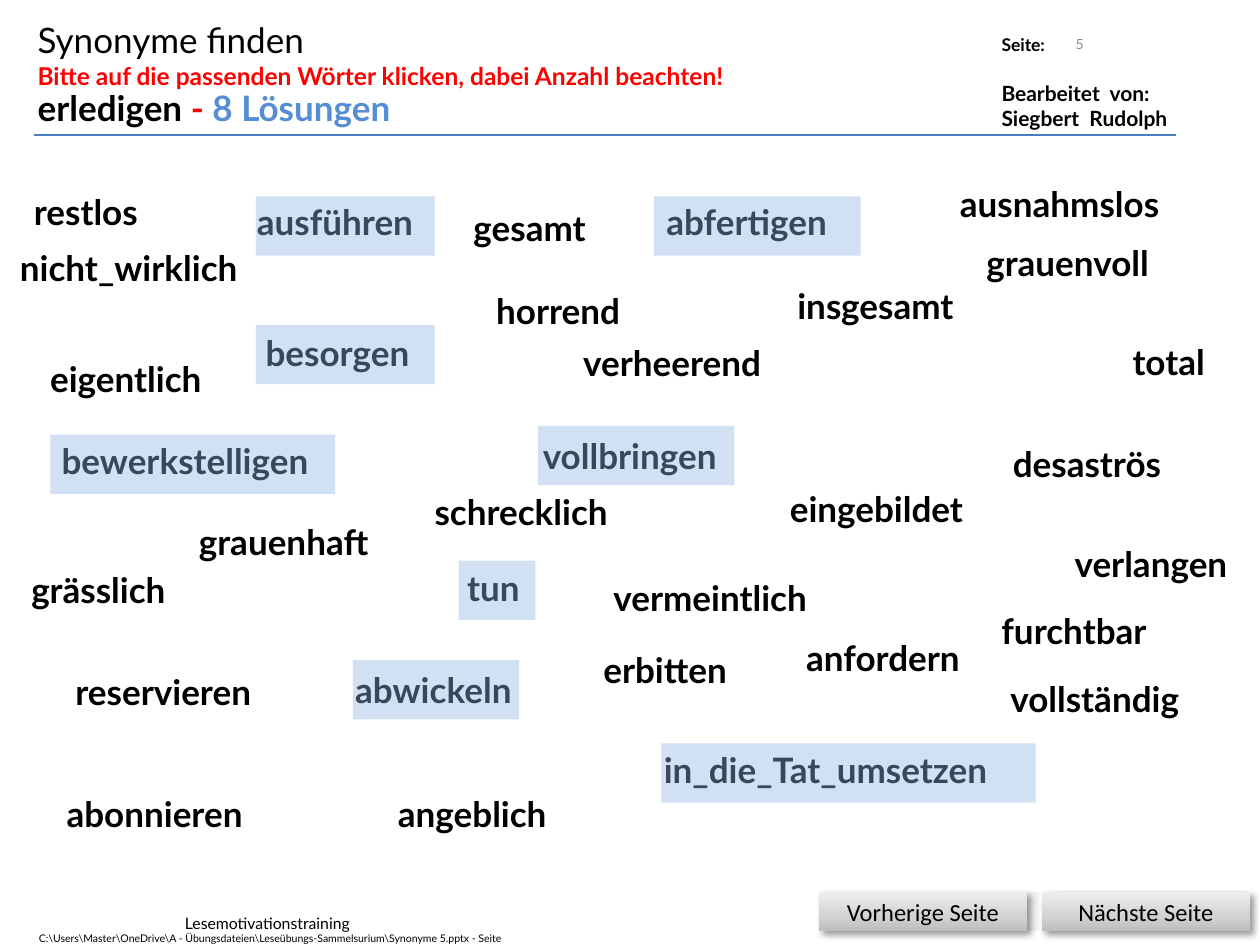
from dataclasses import dataclass

from lxml.etree import SubElement, fromstring
from pptx import Presentation
from pptx.dml.color import RGBColor
from pptx.enum.shapes import MSO_CONNECTOR as Connector, MSO_SHAPE as Preset
from pptx.enum.text import MSO_ANCHOR as Anchor, MSO_AUTO_SIZE as AutoSize, PP_ALIGN as Align
from pptx.oxml.ns import nsdecls, qn
from pptx.util import Inches, Pt

COLORS = {
    "text": "000000", "hint": "FF0000", "count": "558ED5", "rule": "4B7EBC",
    "number": "898989", "mark": "8EB4E3", "paper": "FFFFFF", "plate": "F2F2F2",
}
BUTTON_STOPS = ((0, "BDBDBD"), (35, "D1D1D1"), (100, "EEEEEE"))
WORD_HEIGHT, MARK_HEIGHT = 0.44, 0.47
WORD_FORMAT = {"size": Pt(20), "bold": True}


@dataclass
class Run:
    text: str
    format: dict
    color: str = "text"
    face: str = "Lato"


@dataclass
class Line:
    runs: list[Run]
    format: dict


@dataclass
class Word:
    text: str
    left: float
    top: float
    width: float


@dataclass
class Box:
    left: float
    top: float
    width: float
    height: float

    def lengths(self) -> list[int]:
        return [Inches(n) for n in (self.left, self.top, self.width, self.height)]


@dataclass
class Button:
    label: str
    face: Box
    plate: Box


SOLUTIONS = [
    (Word("ausführen", 1.94, 1.54, 1.52), Box(2.03, 1.56, 1.42, MARK_HEIGHT)),
    (Word("abfertigen", 5.19, 1.54, 1.56), Box(5.19, 1.56, 1.64, MARK_HEIGHT)),
    (Word("besorgen", 2.01, 2.58, 1.39), Box(2.03, 2.58, 1.42, MARK_HEIGHT)),
    (Word("bewerkstelligen", 0.39, 3.44, 2.29), Box(0.4, 3.45, 2.26, MARK_HEIGHT)),
    (Word("vollbringen", 4.21, 3.4, 1.67), Box(4.27, 3.38, 1.56, MARK_HEIGHT)),
    (Word("tun", 3.61, 4.45, 0.64), Box(3.64, 4.45, 0.61, MARK_HEIGHT)),
    (Word("abwickeln", 2.72, 5.26, 1.52), Box(2.8, 5.24, 1.32, MARK_HEIGHT)),
    (Word("in_die_Tat_umsetzen", 5.17, 5.89, 3.03), Box(5.25, 5.9, 2.97, MARK_HEIGHT)),
]
DISTRACTORS = [
    Word("insgesamt", 6.23, 2.21, 1.5), Word("total", 8.89, 2.65, 0.81),
    Word("vollständig", 7.92, 5.33, 1.61), Word("ausnahmslos", 7.52, 1.4, 1.84),
    Word("restlos", 0.17, 1.46, 1.08), Word("gesamt", 3.66, 1.59, 1.13),
    Word("verlangen", 8.43, 4.26, 1.49), Word("erbitten", 4.69, 5.1, 1.28),
    Word("abonnieren", 0.43, 6.24, 1.69), Word("reservieren", 0.5, 5.27, 1.73),
    Word("anfordern", 6.3, 5, 1.51), Word("grauenvoll", 7.73, 1.87, 1.57),
    Word("verheerend", 4.53, 2.66, 1.73), Word("furchtbar", 7.85, 4.79, 1.44),
    Word("horrend", 3.84, 2.25, 1.26), Word("schrecklich", 3.35, 3.84, 1.69),
    Word("grässlich", 0.15, 4.46, 1.33), Word("desaströs", 7.94, 3.46, 1.43),
    Word("grauenhaft", 1.48, 4.08, 1.62), Word("eigentlich", 0.3, 2.79, 1.5),
    Word("angeblich", 3.06, 6.24, 1.46), Word("eingebildet", 6.17, 3.82, 1.68),
    Word("vermeintlich", 4.77, 4.53, 1.87), Word("nicht_wirklich", 0.06, 1.91, 2.09),
]
BUTTONS = [
    Button("Nächste Seite", Box(8.27, 7.08, 1.65, 0.31), Box(8.39, 7.07, 1.5, 0.32)),
    Button("Vorherige Seite", Box(6.5, 7.08, 1.65, 0.31), Box(6.75, 7.08, 1.5, 0.31)),
]


def rgb(name: str) -> RGBColor:
    return RGBColor.from_string(COLORS[name])


def apply(target, values: dict) -> None:
    for name, value in values.items():
        setattr(target, name, value)


def write_lines(frame, lines: list[Line]) -> None:
    for index, line in enumerate(lines):
        paragraph = frame.add_paragraph() if index else frame.paragraphs[0]
        apply(paragraph, line.format)
        for part in line.runs:
            run = paragraph.add_run()
            run.text = part.text
            apply(run.font, {"name": part.face, **part.format})
            run.font.color.rgb = rgb(part.color)


def one_line(text: str, size: float, color: str = "text", bold: bool = False, **spacing) -> Line:
    return Line([Run(text, {"size": Pt(size), "bold": bold}, color)], spacing)


def add_text(slide, box: Box, lines: list[Line], **frame_format):
    """Add a text box that does not wrap and grows with its text by default."""
    label = slide.shapes.add_textbox(*box.lengths())
    apply(label.text_frame, {"word_wrap": False, "auto_size": AutoSize.SHAPE_TO_FIT_TEXT,
                             **frame_format})
    write_lines(label.text_frame, lines)
    return label


def add_word(slide, word: Word) -> None:
    add_text(slide, Box(word.left, word.top, word.width, WORD_HEIGHT),
             [Line([Run(word.text, WORD_FORMAT)], {})])


def add_block(slide, box: Box, color: str):
    block = slide.shapes.add_shape(Preset.RECTANGLE, *box.lengths())
    block.shadow.inherit = False
    block.line.fill.background()
    block.fill.solid()
    block.fill.fore_color.rgb = rgb(color)
    return block


def add_mark(slide, box: Box) -> None:
    """Lay a 40 % opaque highlight over a solution."""
    mark = add_block(slide, box, "mark")
    tint = mark.element.spPr.find(qn("a:solidFill"))[0]
    SubElement(tint, qn("a:alpha"), val="40000")


def add_button(slide, button: Button) -> None:
    add_block(slide, button.plate, "plate")
    face = add_block(slide, button.face, "plate")
    properties = face.element.spPr
    stops = "".join(f'<a:gs pos="{pos * 1000}"><a:srgbClr val="{color}"/></a:gs>'
                    for pos, color in BUTTON_STOPS)
    properties.replace(properties.find(qn("a:solidFill")), fromstring(
        f'<a:gradFill {nsdecls("a")} rotWithShape="1"><a:gsLst>{stops}</a:gsLst>'
        '<a:lin ang="16200000" scaled="0"/></a:gradFill>'))
    properties.find(qn("a:effectLst")).append(fromstring(
        f'<a:outerShdw {nsdecls("a")} blurRad="{Pt(4)}" dist="{Pt(3)}" dir="2700000" '
        'algn="tl" rotWithShape="0"><a:srgbClr val="000000"><a:alpha val="40000"/>'
        '</a:srgbClr></a:outerShdw>'))
    apply(face.text_frame, {"vertical_anchor": Anchor.MIDDLE, "word_wrap": True})
    write_lines(face.text_frame, [Line([Run(button.label, {"size": Pt(14)}, face="Calibri")],
                                       {"alignment": Align.CENTER})])


def add_header(slide) -> None:
    add_text(slide, Box(7.85, 0.22, 1.58, 0.88), [
        one_line("Seite:", 10, bold=True),
        one_line("Bearbeitet  von:", 12, bold=True, space_before=Pt(14.5)),
        one_line("Siegbert  Rudolph", 12, bold=True),
    ])
    rule = slide.shapes.add_connector(Connector.STRAIGHT, Inches(0.27), Inches(1.07),
                                      Inches(9.33), Inches(1.07))
    rule.line.color.rgb = rgb("rule")
    rule.line.width = Pt(1)
    SubElement(rule.element.spPr, qn("a:effectLst"))
    title = add_text(slide, Box(0.2, 0.1, 6.06, 0.67), [
        one_line("Synonyme finden", 20),
        one_line("Bitte auf die passenden Wörter klicken, dabei Anzahl beachten!", 14,
                 "hint", bold=True),
    ])
    title.fill.solid()
    title.fill.fore_color.rgb = rgb("paper")
    add_text(slide, Box(6.37, 0.15, 2.33, 0.4),
             [one_line("5", 8, "number", alignment=Align.RIGHT)],
             word_wrap=True, auto_size=AutoSize.NONE, vertical_anchor=Anchor.MIDDLE)
    task = [Run("erledigen ", WORD_FORMAT), Run("- ", WORD_FORMAT, "hint"),
            Run("8 Lösungen", WORD_FORMAT, "count")]
    add_text(slide, Box(0.2, 0.64, 3.18, WORD_HEIGHT), [Line(task, {"space_after": Pt(12)})])


def main() -> None:
    deck = Presentation()
    deck.slide_width, deck.slide_height = Inches(10), Inches(7.5)
    slide = deck.slides.add_slide(deck.slide_layouts[6])
    add_header(slide)
    for button in BUTTONS:
        add_button(slide, button)
    for word, mark in SOLUTIONS:
        add_word(slide, word)
        add_mark(slide, mark)
    for word in DISTRACTORS:
        add_word(slide, word)
    add_text(slide, Box(1.37, 7.2, 1.56, 0.25), [one_line("Lesemotivationstraining", 9)])
    add_text(slide, Box(0.21, 7.35, 3.93, 0.2), [one_line(
        r"C:\Users\Master\OneDrive\A - Übungsdateien\Leseübungs-Sammelsurium"
        r"\Synonyme 5.pptx - Seite", 6)])
    deck.save("out.pptx")


if __name__ == "__main__":
    main()
